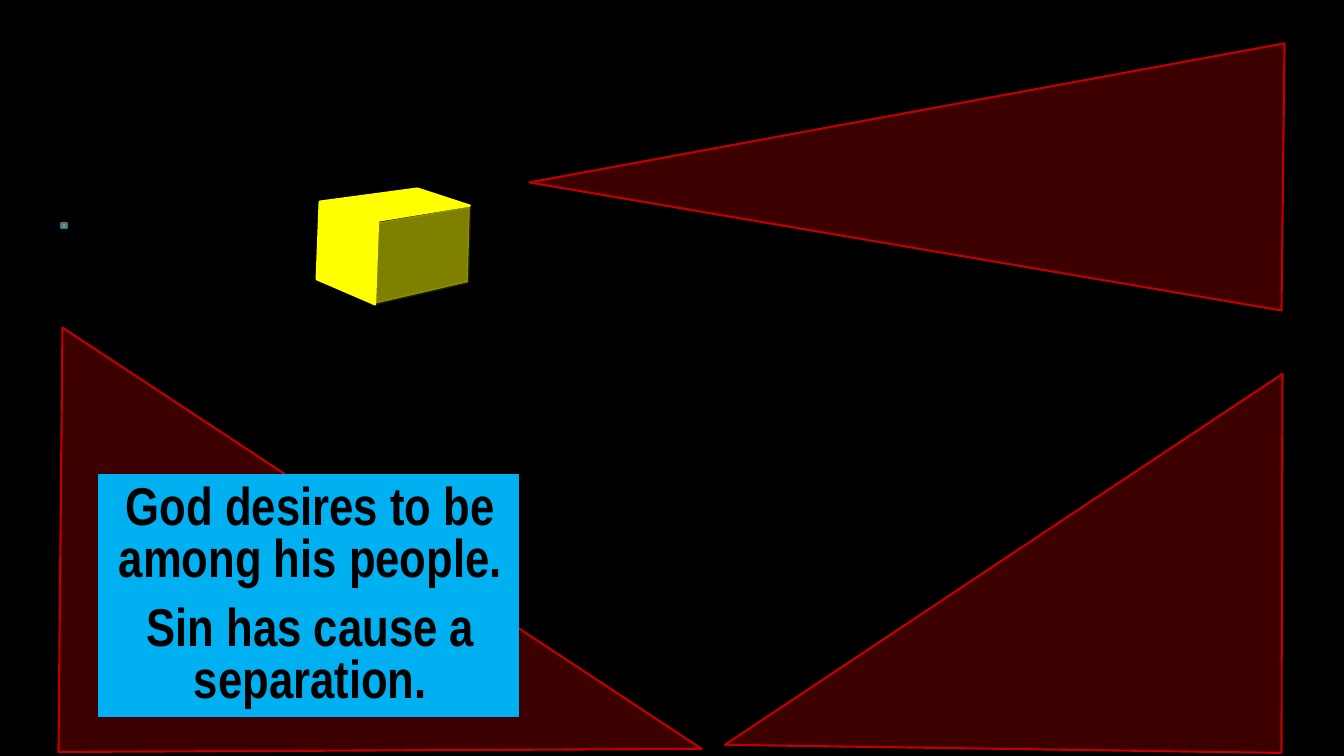
from dataclasses import dataclass
from typing import Optional

from lxml.etree import SubElement
from pptx import Presentation
from pptx.dml.color import RGBColor
from pptx.enum.shapes import MSO_SHAPE as Preset
from pptx.enum.text import MSO_ANCHOR as Anchor, PP_ALIGN as Align
from pptx.oxml.ns import qn
from pptx.shapes.autoshape import Shape
from pptx.slide import Slide
from pptx.util import Inches, Pt

COLORS = {
    "black": "000000",
    "red": "C00000",
    "yellow": "FFFF00",
    "blue": "00B0F0",
    "teal": "6EA0B0",
    "dark_teal": "517682",
}


@dataclass(frozen=True)
class Style:
    fill: str
    line: str
    line_width: float = 1.5
    fill_opacity: Optional[int] = None
    line_opacity: Optional[int] = None


@dataclass(frozen=True)
class Box:
    left: float
    top: float
    width: float
    height: float
    style: Style


@dataclass(frozen=True)
class Polygon:
    points: tuple[tuple[float, float], ...]
    style: Style


WEDGE = Style("red", "red", fill_opacity=32)
CUBE_BODY = Style("yellow", "yellow")
CUBE_SHADE = Style("yellow", "yellow", 2.25, 50, 10)

MARKER = Box(0.61, 2.21, 0.05, 0.05, Style("teal", "dark_teal"))
MESSAGE = Box(0.98, 4.71, 4.16, 2.4, Style("blue", "blue", 0.75))
MESSAGE_LINES = (
    "God desires to be among his people.",
    "Sin has cause a separation.",
)
WEDGES = (
    Polygon(((12.71, 3.08), (12.74, 0.43), (5.25, 1.81)), WEDGE),
    Polygon(((6.96, 7.43), (0.62, 3.25), (0.58, 7.46)), WEDGE),
    Polygon(((7.19, 7.39), (12.72, 3.71), (12.71, 7.47)), WEDGE),
)
CUBE = (
    Polygon(
        ((3.17, 2), (3.14, 2.77), (3.72, 3.02), (3.75, 2.19), (4.66, 2.04), (4.14, 1.87)),
        CUBE_BODY,
    ),
    Polygon(((3.69, 3.02), (4.64, 2.8), (4.66, 2.05), (3.74, 2.21)), CUBE_SHADE),
)

FRAME_FORMAT = {
    "word_wrap": True,
    "vertical_anchor": Anchor.TOP,
    "margin_left": Inches(0.1),
    "margin_top": Inches(0.1),
    "margin_right": Inches(0.1),
    "margin_bottom": Inches(0.05),
}
PARAGRAPH_FORMAT = {
    "alignment": Align.CENTER,
    "line_spacing": Pt(37),
    "space_after": Pt(12),
}
FONT_FORMAT = {"name": "Arial Narrow", "size": Pt(38), "bold": True}


def color(name: str) -> RGBColor:
    return RGBColor.from_string(COLORS[name])


def apply_format(target: object, values: dict) -> None:
    for name, value in values.items():
        setattr(target, name, value)


def set_opacity(shape: Shape, color_path: str, percent: Optional[int]) -> None:
    if percent is not None:
        for node in shape.element.spPr.xpath(color_path):
            SubElement(node, qn("a:alpha")).set("val", str(percent * 1000))


def apply_style(shape: Shape, style: Style) -> None:
    shape.shadow.inherit = False
    shape.fill.solid()
    shape.fill.fore_color.rgb = color(style.fill)
    shape.line.color.rgb = color(style.line)
    shape.line.width = Pt(style.line_width)
    set_opacity(shape, "a:solidFill/a:srgbClr", style.fill_opacity)
    set_opacity(shape, "a:ln/a:solidFill/a:srgbClr", style.line_opacity)


def draw_box(slide: Slide, box: Box) -> Shape:
    bounds = (Inches(side) for side in (box.left, box.top, box.width, box.height))
    shape = slide.shapes.add_shape(Preset.RECTANGLE, *bounds)
    apply_style(shape, box.style)
    return shape


def draw_polygon(slide: Slide, polygon: Polygon) -> None:
    start, *others = [(Inches(x), Inches(y)) for x, y in polygon.points]
    builder = slide.shapes.build_freeform(*start)
    builder.add_line_segments(others, close=True)
    apply_style(builder.convert_to_shape(), polygon.style)


def write_message(shape: Shape, lines: tuple[str, ...]) -> None:
    frame = shape.text_frame
    apply_format(frame, FRAME_FORMAT)
    frame.text = "\n".join(lines)
    for paragraph in frame.paragraphs:
        apply_format(paragraph, PARAGRAPH_FORMAT)
        for properties in frame._txBody.xpath("a:p/a:pPr"):
            properties.set("marL", str(Inches(0.04)))
        font = paragraph.runs[0].font
        apply_format(font, FONT_FORMAT)
        font.color.rgb = color("black")


def main() -> None:
    presentation = Presentation()
    presentation.slide_width = Inches(13.33)
    presentation.slide_height = Inches(7.5)
    slide = presentation.slides.add_slide(presentation.slide_layouts[6])
    slide.background.fill.solid()
    slide.background.fill.fore_color.rgb = color("black")

    draw_box(slide, MARKER)
    for wedge in WEDGES:
        draw_polygon(slide, wedge)
    write_message(draw_box(slide, MESSAGE), MESSAGE_LINES)
    for face in CUBE:
        draw_polygon(slide, face)
    presentation.save("out.pptx")


if __name__ == "__main__":
    main()
